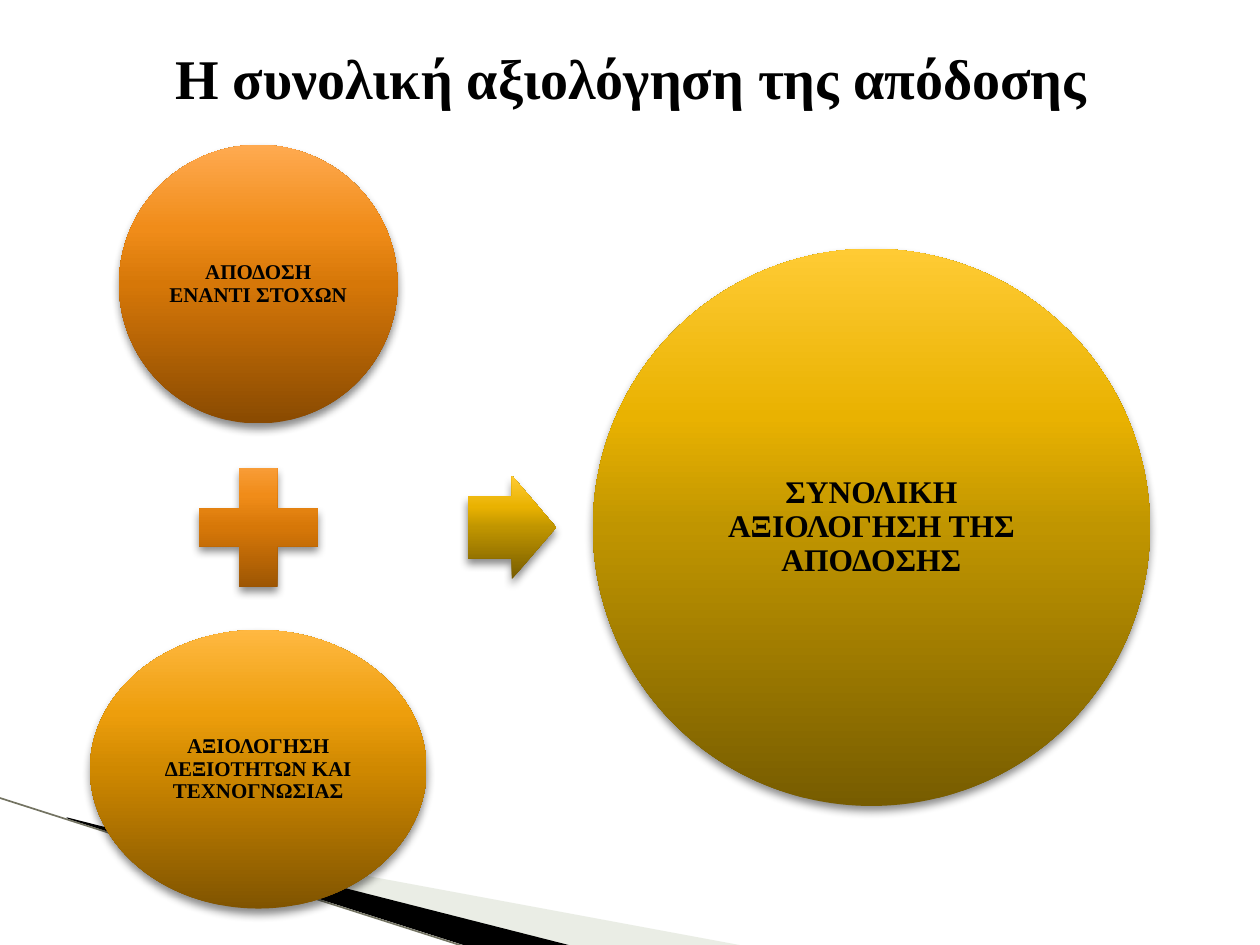
from lxml.etree import SubElement
from pptx import Presentation
from pptx.dml.color import RGBColor
from pptx.enum.shapes import MSO_CONNECTOR, MSO_SHAPE
from pptx.enum.text import MSO_ANCHOR, PP_ALIGN
from pptx.oxml.ns import qn
from pptx.util import Pt

BLACK = RGBColor(0x00, 0x00, 0x00)
SAGE = RGBColor(0xCB, 0xD4, 0xC0)
OLIVE = RGBColor(0x73, 0x73, 0x62)
ORANGE = [RGBColor.from_string(c) for c in ("894A01", "D67708", "F08C19", "FFAA50")]
AMBER = [RGBColor.from_string(c) for c in ("805400", "CF8800", "ED9E0C", "FFB841")]
GOLD = [RGBColor.from_string(c) for c in ("775C00", "C09500", "E9B201", "FFCB34")]
STOPS = (0, 50, 70, 100)
FONT = {"name": "Times New Roman", "bold": True}
LEFT_X = 147.6
MIDDLE_Y = 301.4


def add_color(parent, color, alpha=None):
    clr = SubElement(parent, qn("a:srgbClr"), val=str(color))
    if alpha is not None:
        SubElement(clr, qn("a:alpha"), val=str(alpha * 1000))


def format_text(tf, text, size, margin):
    frame = {"word_wrap": True, "vertical_anchor": MSO_ANCHOR.MIDDLE}
    for side in ("left", "right", "top", "bottom"):
        frame["margin_" + side] = Pt(margin)
    for name, value in frame.items():
        setattr(tf, name, value)
    p = tf.paragraphs[0]
    p.alignment = PP_ALIGN.CENTER
    r = p.add_run()
    r.text = text
    for name, value in {**FONT, "size": Pt(size)}.items():
        setattr(r.font, name, value)
    r.font.color.rgb = BLACK
    return p


def add_title(s, text):
    title = s.shapes.title
    box = {"left": 36.7, "top": 20.9, "width": 648, "height": 46}
    for name, value in box.items():
        setattr(title, name, Pt(value))
    format_text(title.text_frame, text, 32, 3.6)


def add_wedge(s, points, color, alpha=None):
    fb = s.shapes.build_freeform(*points[0], scale=Pt(1))
    fb.add_line_segments(points[1:], close=True)
    sp = fb.convert_to_shape()
    sp.shadow.inherit = False
    sp.line.fill.background()
    sp.fill.solid()
    sp.fill.fore_color.rgb = color
    if alpha is not None:
        clr = sp._element.spPr.find(".//" + qn("a:srgbClr"))
        SubElement(clr, qn("a:alpha"), val=str(alpha * 1000))


def add_edge(s, x1, y1, x2, y2):
    line = s.shapes.add_connector(MSO_CONNECTOR.STRAIGHT, Pt(x1), Pt(y1), Pt(x2), Pt(y2))
    line.line.color.rgb = OLIVE
    line.line.width = Pt(0.95)
    SubElement(line._element.spPr, qn("a:effectLst"))


def set_gradient(sp, colors):
    sp.fill.gradient()
    sp.fill.gradient_angle = 90
    stops = sp._element.spPr.find(".//" + qn("a:gsLst"))
    for stop in list(stops):
        stops.remove(stop)
    for pos, color in zip(STOPS, colors):
        add_color(SubElement(stops, qn("a:gs"), pos=str(pos * 1000)), color)


def set_shadow(sp):
    sp.shadow.inherit = False
    effects = sp._element.spPr.find(qn("a:effectLst"))
    shadow = SubElement(effects, qn("a:outerShdw"), blurRad=str(Pt(5)),
                        dist=str(Pt(3)), dir="5400000", rotWithShape="0")
    add_color(shadow, BLACK, 45)


def add_glossy(s, kind, cx, cy, w, h, colors):
    sp = s.shapes.add_shape(kind, Pt(cx - w / 2), Pt(cy - h / 2), Pt(w), Pt(h))
    sp.line.fill.background()
    set_gradient(sp, colors)
    set_shadow(sp)
    return sp


def add_ellipse(s, cx, cy, w, h, colors, text, size):
    sp = add_glossy(s, MSO_SHAPE.OVAL, cx, cy, w, h, colors)
    p = format_text(sp.text_frame, text, size, size / 8)
    p.line_spacing = 0.9


def main():
    prs = Presentation()
    prs.slide_width, prs.slide_height = Pt(720), Pt(540)
    s = prs.slides.add_slide(prs.slide_layouts[5])

    add_wedge(s, [(39.6, 468.7), (428.4, 540.7), (328.3, 540.7), (39.6, 468)], SAGE, 40)
    add_wedge(s, [(38.2, 467.3), (329, 540.7), (267.8, 541.4), (38.9, 468)], BLACK)
    add_edge(s, -0.7, 455.8, 267.1, 541.4)
    add_title(s, "Η συνολική αξιολόγηση της απόδοσης")

    add_ellipse(s, LEFT_X, 162.4, 159.2, 159.2, ORANGE, "ΑΠΟΔΟΣΗ ΕΝΑΝΤΙ ΣΤΟΧΩΝ", 12)
    add_glossy(s, MSO_SHAPE.MATH_PLUS, LEFT_X, MIDDLE_Y, 92.3, 92.3, ORANGE)
    add_ellipse(s, LEFT_X, 439.6, 192.4, 159.2, AMBER,
                "ΑΞΙΟΛΟΓΗΣΗ ΔΕΞΙΟΤΗΤΩΝ ΚΑΙ ΤΕΧΝΟΓΝΩΣΙΑΣ", 12)
    arrow = add_glossy(s, MSO_SHAPE.RIGHT_ARROW, 292.5, MIDDLE_Y, 50.6, 59.2, GOLD)
    arrow.adjustments[0], arrow.adjustments[1] = 0.6, 0.5
    add_ellipse(s, 498, MIDDLE_Y, 318.4, 318.4, GOLD, "ΣΥΝΟΛΙΚΗ ΑΞΙΟΛΟΓΗΣΗ ΤΗΣ ΑΠΟΔΟΣΗΣ", 18)

    prs.save("out.pptx")


if __name__ == "__main__":
    main()
